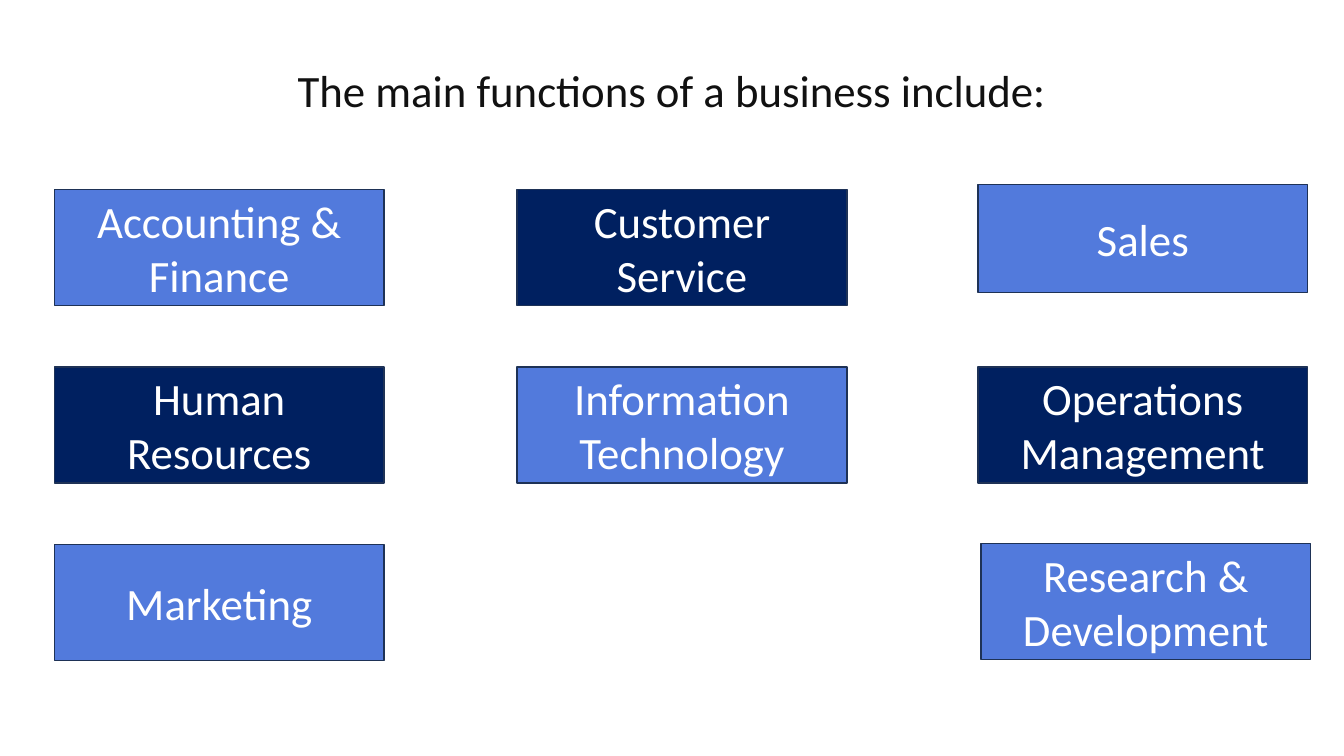
from dataclasses import dataclass

from pptx import Presentation
from pptx.dml.color import RGBColor
from pptx.enum.shapes import MSO_SHAPE
from pptx.enum.text import MSO_ANCHOR, PP_ALIGN
from pptx.slide import Slide
from pptx.text.text import TextFrame
from pptx.util import Inches, Pt


@dataclass(frozen=True)
class Theme:
    light: RGBColor = RGBColor(0x52, 0x7A, 0xDC)
    dark: RGBColor = RGBColor(0x00, 0x20, 0x60)
    outline: RGBColor = RGBColor(0x1E, 0x32, 0x56)
    heading: RGBColor = RGBColor(0x11, 0x11, 0x11)
    label: RGBColor = RGBColor(0xFF, 0xFF, 0xFF)
    font: str = "Calibri"
    size: Pt = Pt(32)
    outline_width: Pt = Pt(1)


@dataclass(frozen=True)
class BusinessFunction:
    label: str
    column: int
    row: int
    shift_x: float = 0
    shift_y: float = 0
    height: float = 1.15


THEME = Theme()
COLUMN_LEFTS = (0.54, 5.13, 9.7)
FIRST_ROW_TOP = 1.88
ROW_STEP = 1.76
BOX_WIDTH = 3.27

FUNCTIONS = (
    BusinessFunction("Accounting & Finance", 0, 0),
    BusinessFunction("Customer Service", 1, 0),
    BusinessFunction("Sales", 2, 0, shift_y=-0.05, height=1.07),
    BusinessFunction("Human Resources", 0, 1),
    BusinessFunction("Information Technology", 1, 1),
    BusinessFunction("Operations Management", 2, 1),
    BusinessFunction("Marketing", 0, 2),
    BusinessFunction("Research & Development", 2, 2, shift_x=0.03, shift_y=-0.01),
)


def write_text(frame: TextFrame, text: str, color: RGBColor, anchor: MSO_ANCHOR) -> None:
    frame.text = text
    frame.word_wrap = True
    frame.vertical_anchor = anchor
    paragraph = frame.paragraphs[0]
    paragraph.alignment = PP_ALIGN.CENTER
    font = paragraph.runs[0].font
    font.name = THEME.font
    font.size = THEME.size
    font.color.rgb = color


def add_heading(page: Slide, text: str) -> None:
    title = page.shapes.title
    title.left, title.top = Inches(0.33), Inches(0.63)
    title.width, title.height = Inches(12.67), Inches(0.65)
    write_text(title.text_frame, text, THEME.heading, MSO_ANCHOR.TOP)
    title.text_frame.paragraphs[0].line_spacing = 0.9


def add_function(page: Slide, function: BusinessFunction) -> None:
    box = page.shapes.add_shape(
        MSO_SHAPE.RECTANGLE,
        Inches(COLUMN_LEFTS[function.column] + function.shift_x),
        Inches(FIRST_ROW_TOP + function.row * ROW_STEP + function.shift_y),
        Inches(BOX_WIDTH),
        Inches(function.height),
    )
    is_dark = (function.column + function.row) % 2 == 1
    box.shadow.inherit = False
    box.fill.solid()
    box.fill.fore_color.rgb = THEME.dark if is_dark else THEME.light
    box.line.color.rgb = THEME.outline
    box.line.width = THEME.outline_width
    write_text(box.text_frame, function.label, THEME.label, MSO_ANCHOR.MIDDLE)


def main() -> None:
    deck = Presentation()
    deck.slide_width, deck.slide_height = Inches(13.33), Inches(7.5)
    page = deck.slides.add_slide(deck.slide_layouts.get_by_name("Title Only"))
    add_heading(page, "The main functions of a business include:")
    for function in FUNCTIONS:
        add_function(page, function)
    deck.save("out.pptx")


if __name__ == "__main__":
    main()
